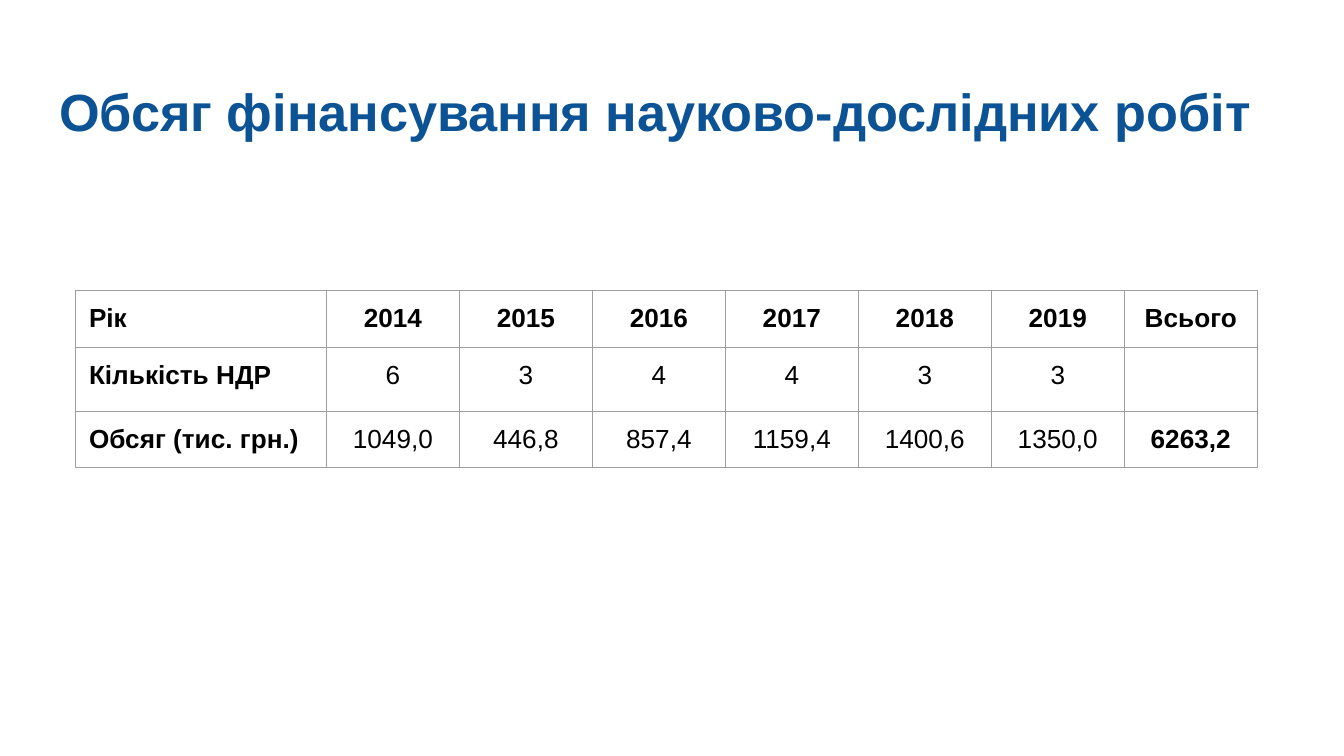
import pptx
import pptx.dml.color
import pptx.enum.text
import pptx.oxml
import pptx.oxml.ns
import pptx.util

Pt = pptx.util.Pt
RGB = pptx.dml.color.RGBColor
ALIGN = pptx.enum.text.PP_ALIGN
ANCHOR = pptx.enum.text.MSO_ANCHOR

BLUE = RGB(0x0B, 0x53, 0x94)
BLACK = RGB(0, 0, 0)
GREY = RGB(0x9E, 0x9E, 0x9E)
FONT = "Arial"
INSET = Pt(7.2)

ROWS = [
    ["Рік", "2014", "2015", "2016", "2017", "2018", "2019", "Всього"],
    ["Кількість НДР", "6", "3", "4", "4", "3", "3", ""],
    ["Обсяг (тис. грн.)", "1049,0", "446,8", "857,4", "1159,4", "1400,6",
     "1350,0", "6263,2"],
]
WIDTHS = [134.4] + [71.25] * 7
HEIGHTS = [30.2, 34.3, 30.2]


def style(para, size, color, bold, align):
    para.alignment = align
    font = para.font
    font.name = FONT
    font.size = Pt(size)
    font.bold = bold
    font.color.rgb = color


def add_title(slide, text):
    title = slide.shapes.title
    title.left, title.top = Pt(24.5), Pt(35.3)
    title.width, title.height = Pt(671), Pt(45.4)
    frame = title.text_frame
    frame.word_wrap = True
    frame.auto_size = pptx.enum.text.MSO_AUTO_SIZE.NONE
    frame.vertical_anchor = ANCHOR.TOP
    frame.margin_left = frame.margin_right = INSET
    frame.margin_top = frame.margin_bottom = INSET
    frame.text = text
    style(frame.paragraphs[0], 28, BLUE, True, ALIGN.LEFT)


def add_lines(cell):
    # Cell borders go before the fill in the cell properties
    props = cell._tc.get_or_add_tcPr()
    for pos, side in enumerate(("lnL", "lnR", "lnT", "lnB")):
        line = pptx.oxml.parse_xml(
            f'<a:{side} {pptx.oxml.ns.nsdecls("a")} w="{Pt(0.75)}">'
            f'<a:solidFill><a:srgbClr val="{GREY}"/></a:solidFill></a:{side}>')
        props.insert(pos, line)


def fill_cell(cell, text, bold, align):
    cell.fill.background()
    cell.margin_left = cell.margin_right = INSET
    cell.margin_top = cell.margin_bottom = INSET
    cell.vertical_anchor = ANCHOR.TOP
    cell.text = text
    style(cell.text_frame.paragraphs[0], 14, BLACK, bold, align)
    add_lines(cell)


def add_grid(slide):
    frame = slide.shapes.add_table(
        len(ROWS), len(WIDTHS), Pt(40.5), Pt(155.8),
        Pt(sum(WIDTHS)), Pt(sum(HEIGHTS)))
    table = frame.table
    table.first_row = table.horz_banding = False
    for col, width in zip(table.columns, WIDTHS):
        col.width = Pt(width)
    for row, height in zip(table.rows, HEIGHTS):
        row.height = Pt(height)
    last = len(WIDTHS) - 1
    for r, row in enumerate(ROWS):
        for c, text in enumerate(row):
            # The heading row, the labels and the total are bold
            bold = r == 0 or c in (0, last)
            align = ALIGN.CENTER if c else ALIGN.LEFT
            fill_cell(table.cell(r, c), text, bold, align)


def main():
    deck = pptx.Presentation()
    deck.slide_width, deck.slide_height = Pt(720), Pt(405)
    slide = deck.slides.add_slide(deck.slide_layouts[5])
    add_title(slide, "Обсяг фінансування науково-дослідних робіт")
    add_grid(slide)
    deck.save("out.pptx")


if __name__ == "__main__":
    main()
